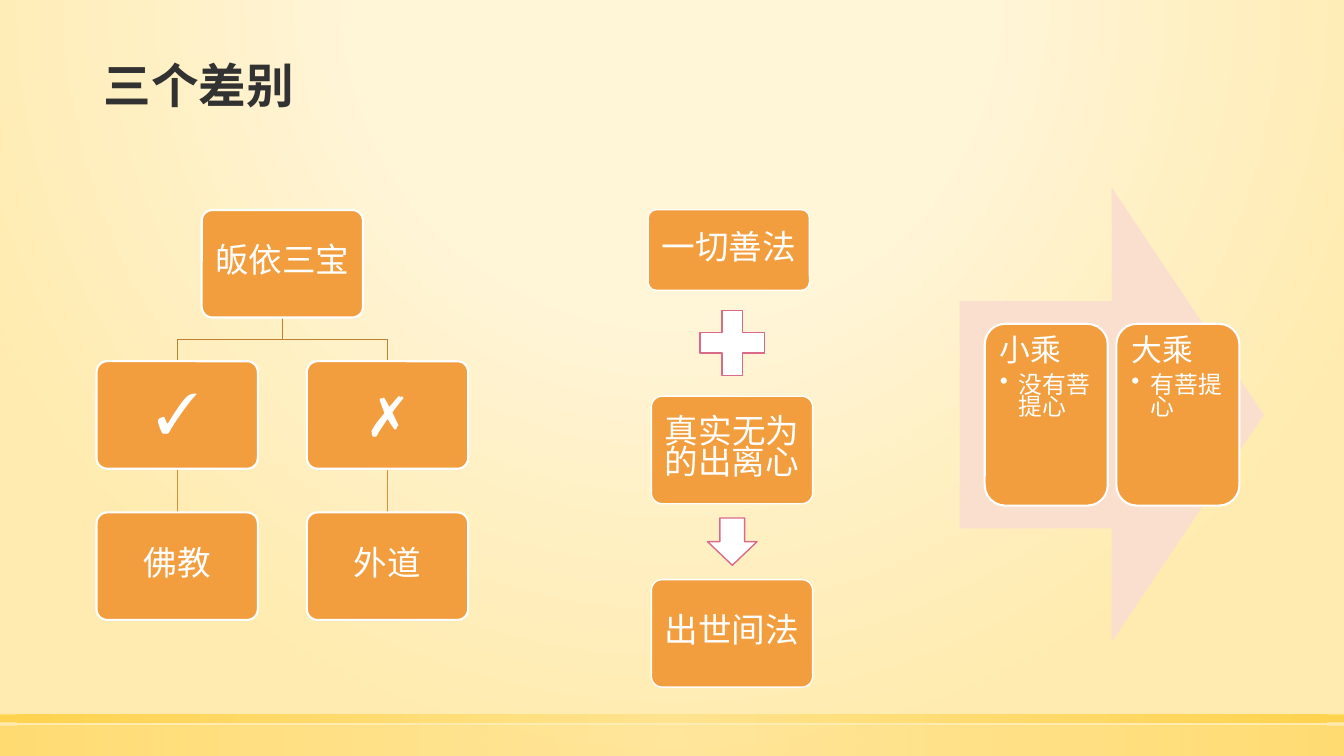
from dataclasses import dataclass

from lxml import etree
from pptx import Presentation
from pptx.dml.color import RGBColor
from pptx.enum import shapes, text
from pptx.oxml.ns import qn
from pptx.util import Pt


@dataclass(frozen=True)
class Theme:
    ink: str = "323232"
    white: str = "FFFFFF"
    orange: str = "F29E3E"
    branch: str = "C27F32"
    twig: str = "DC8F38"
    pink: str = "DA6A89"
    blush: str = "FADFCE"
    pale: str = "FFF5D7"
    cream: str = "FFEBAF"
    light_gold: str = "FFE186"
    gold: str = "FFCD36"
    sans: str = "Noto Sans CJK SC"
    check_font: str = "Times New Roman"
    cross_font: str = "TeX Gyre Pagella"
    title: int = 34
    label: int = 24
    mark: int = 40
    heading: int = 22
    bullet: int = 17
    leading: float = 0.76
    mark_leading: float = 0.9


THEME = Theme()
SHAPE = shapes.MSO_SHAPE
NODE_W, NODE_H = 115.2, 76.8


def rgb(colour):
    return RGBColor.from_string(colour)


def radial_fill(holder, stops, focus):
    gradient = etree.Element(qn("a:gradFill"), rotWithShape="1")
    stop_list = etree.SubElement(gradient, qn("a:gsLst"))
    for position, colour, opacity in stops:
        stop = etree.SubElement(stop_list, qn("a:gs"), pos=str(position * 1000))
        tint = etree.SubElement(stop, qn("a:srgbClr"), val=colour)
        if opacity < 100:
            etree.SubElement(tint, qn("a:alpha"), val=str(opacity * 1000))
    circle = etree.SubElement(gradient, qn("a:path"), path="circle")
    edges = {side: str(value * 1000) for side, value in zip("ltrb", focus)}
    etree.SubElement(circle, qn("a:fillToRect"), edges)
    solid = holder.find(qn("a:solidFill"))
    holder.replace(solid, gradient)


def style_paragraph(paragraph, size, colour=THEME.white, face=THEME.sans,
                    align=text.PP_ALIGN.CENTER, leading=THEME.leading):
    paragraph.alignment = align
    paragraph.line_spacing = leading
    font = paragraph.font
    font.size = Pt(size)
    font.color.rgb = rgb(colour)
    font.name = face
    defaults = paragraph._p.pPr.find(qn("a:defRPr"))
    for script in ("a:ea", "a:sym"):
        etree.SubElement(defaults, qn(script), typeface=face)


def add_block(slide, kind, box, fill, line=None, width=1):
    block = slide.shapes.add_shape(kind, *map(Pt, box))
    block.shadow.inherit = False
    block.fill.solid()
    block.fill.fore_color.rgb = rgb(fill)
    if line:
        block.line.color.rgb = rgb(line)
        block.line.width = Pt(width)
    else:
        block.line.fill.background()
    return block


def set_insets(frame, inset):
    frame.word_wrap = True
    frame.margin_left = frame.margin_right = Pt(inset)
    frame.margin_top = frame.margin_bottom = Pt(inset)


def add_node(slide, box, label, width=1, size=THEME.label, face=THEME.sans,
             leading=THEME.leading):
    node = add_block(slide, SHAPE.ROUNDED_RECTANGLE, box, THEME.orange,
                     THEME.white, width)
    node.adjustments[0] = 0.1
    frame = node.text_frame
    set_insets(frame, 6.8)
    frame.vertical_anchor = text.MSO_ANCHOR.MIDDLE
    frame.text = label
    style_paragraph(frame.paragraphs[0], size, face=face, leading=leading)


def add_backdrop(slide, width, height):
    slide.background.fill.solid()
    holder = slide.element.find(".//" + qn("p:bgPr"))
    radial_fill(holder, [(0, THEME.pale, 59), (40, THEME.pale, 66),
                         (100, THEME.cream, 100)], (50, -80, 50, 180))
    for top, depth, opacity in ((height - 21.6, 21.6, 50),
                                (height - 29.8, 5.8, 80)):
        band = add_block(slide, SHAPE.RECTANGLE, (0, top, width, depth),
                         THEME.gold)
        radial_fill(band.element.spPr, [(0, THEME.light_gold, opacity),
                                        (100, THEME.gold, opacity)], (50,) * 4)


def add_title(slide, box, wording):
    title = slide.shapes.title
    title.left, title.top, title.width, title.height = map(Pt, box)
    frame = title.text_frame
    frame.text = wording
    frame.vertical_anchor = text.MSO_ANCHOR.BOTTOM
    style_paragraph(frame.paragraphs[0], THEME.title, THEME.ink,
                    align=text.PP_ALIGN.LEFT)
    frame.paragraphs[0].font.bold = True


def add_refuge_tree(slide, box):
    left, top, width, height = box
    gap = (height - 3 * NODE_H) / 2
    rows = [top + row * (NODE_H + gap) for row in range(3)]
    middle = left + width / 2
    branches = (
        (left, "✓", THEME.check_font, "佛教"),
        (left + width - NODE_W, "✗", THEME.cross_font, "外道"),
    )
    for x, mark, face, outcome in branches:
        centre = x + NODE_W / 2
        fork = rows[1] - gap / 2
        builder = slide.shapes.build_freeform(Pt(middle), Pt(rows[0] + NODE_H))
        builder.add_line_segments(
            [(Pt(middle), Pt(fork)), (Pt(centre), Pt(fork)),
             (Pt(centre), Pt(rows[1]))], close=False)
        branch = builder.convert_to_shape()
        branch.shadow.inherit = False
        branch.fill.background()
        branch.line.color.rgb = rgb(THEME.branch)
        branch.line.width = Pt(1)
        twig = slide.shapes.add_connector(
            shapes.MSO_CONNECTOR.STRAIGHT, Pt(centre), Pt(rows[1] + NODE_H),
            Pt(centre), Pt(rows[2]))
        twig.line.color.rgb = rgb(THEME.twig)
        twig.line.width = Pt(1)
        etree.SubElement(twig.element.spPr, qn("a:effectLst"))
        add_node(slide, (x, rows[1], NODE_W, NODE_H), mark, 1.5, THEME.mark,
                 face, THEME.mark_leading)
        add_node(slide, (x, rows[2], NODE_W, NODE_H), outcome, 1.5)
    add_node(slide, (middle - NODE_W / 2, rows[0], NODE_W, NODE_H),
             "皈依三宝", 1.5)


def add_renunciation_sum(slide, box):
    left, top, width, height = box
    right_column = left + width - NODE_W
    add_node(slide, (left, top, NODE_W, 57.6), "一切善法")
    add_block(slide, SHAPE.MATH_PLUS, (left + 28.8, top + 63.4, 62.6, 63.4),
              THEME.white, THEME.pink)
    add_node(slide, (right_column, top + 133.2, NODE_W, NODE_H),
             "真实无为的出离心")
    add_block(slide, SHAPE.DOWN_ARROW, (left + 42.4, top + 220.2, 35.4, 33.8),
              THEME.white, THEME.pink)
    add_node(slide, (right_column, top + height - NODE_H, NODE_W, NODE_H),
             "出世间法")


def add_vehicle_arrow(slide, box):
    left, top, width, height = box
    add_block(slide, SHAPE.RIGHT_ARROW, box, THEME.blush)
    card_w, card_h = 87.9, height * 0.4
    cards = (("小乘", "没有菩提心"), ("大乘", "有菩提心"))
    for index, (vehicle, trait) in enumerate(cards):
        card = add_block(
            slide, SHAPE.ROUNDED_RECTANGLE,
            (left + 18 + index * 94, top + (height - card_h) / 2,
             card_w, card_h), THEME.orange, THEME.white, 1.5)
        frame = card.text_frame
        set_insets(frame, 6.5)
        frame.vertical_anchor = text.MSO_ANCHOR.TOP
        frame.text = vehicle
        heading = frame.paragraphs[0]
        heading.space_after = Pt(6.5)
        style_paragraph(heading, THEME.heading, align=text.PP_ALIGN.LEFT)
        point = frame.add_paragraph()
        point.text = trait
        point.level = 1
        properties = point._p.get_or_add_pPr()
        properties.set("marL", str(Pt(13.5)))
        properties.set("indent", str(Pt(-13.5)))
        etree.SubElement(properties, qn("a:buChar"), char="•")
        style_paragraph(point, THEME.bullet, align=text.PP_ALIGN.LEFT)


def main():
    deck = Presentation()
    deck.slide_width, deck.slide_height = Pt(960), Pt(540)
    slide = deck.slides.add_slide(deck.slide_layouts[5])
    add_backdrop(slide, 960, 540)
    add_title(slide, (67, 36.7, 787.7, 46.8), "三个差别")
    add_refuge_tree(slide, (69, 150, 265.4, 292.8))
    add_renunciation_sum(slide, (463, 149.8, 117.5, 341))
    add_vehicle_arrow(slide, (685.4, 133.9, 217.4, 324.7))
    deck.save("out.pptx")


if __name__ == "__main__":
    main()
